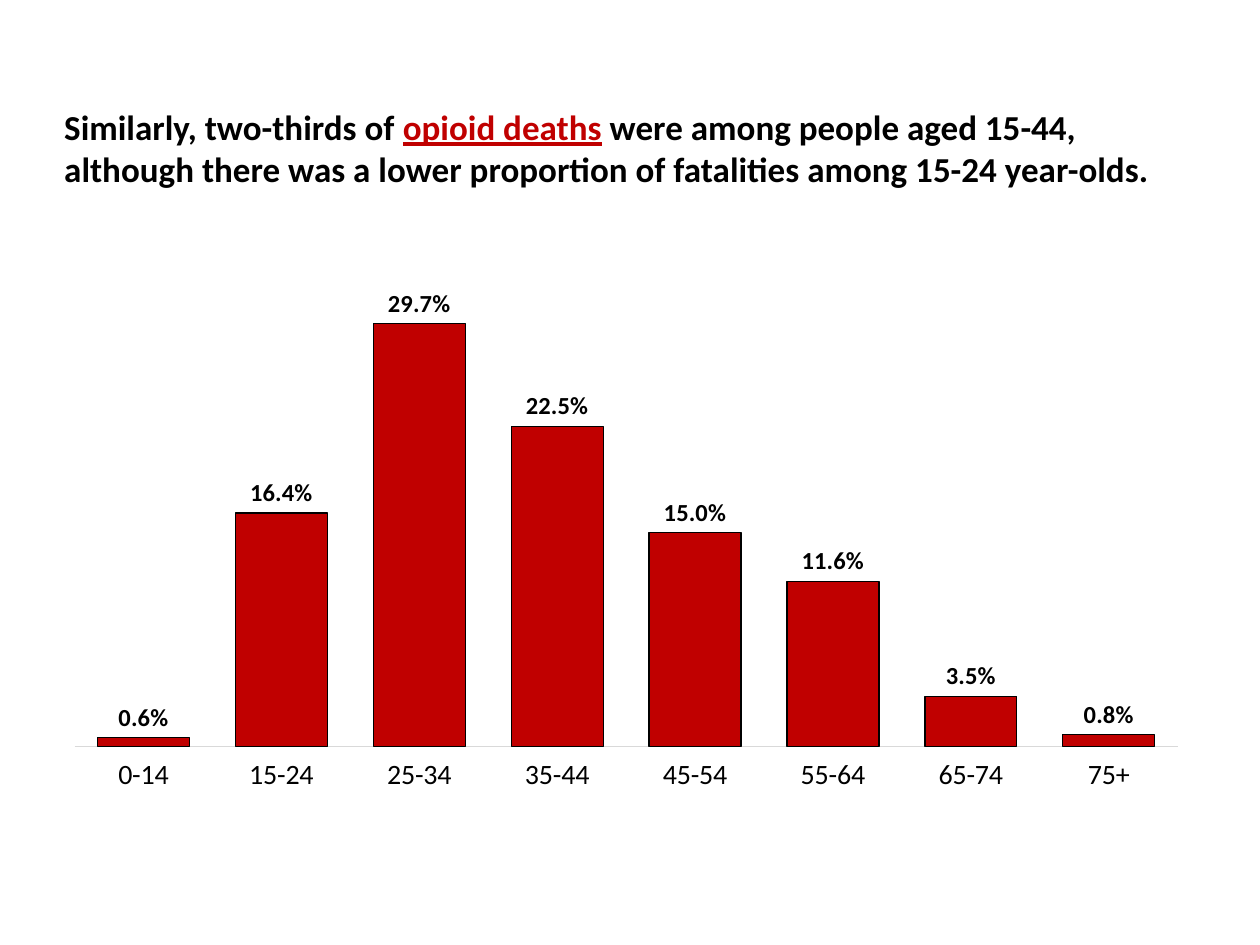
from dataclasses import dataclass

from lxml import etree
from pptx import Presentation
from pptx.chart.data import CategoryChartData
from pptx.dml.color import RGBColor
from pptx.enum.chart import XL_CHART_TYPE, XL_LABEL_POSITION, XL_TICK_LABEL_POSITION, XL_TICK_MARK
from pptx.enum.text import MSO_ANCHOR, MSO_AUTO_SIZE, PP_ALIGN
from pptx.oxml.ns import qn
from pptx.util import Inches, Pt

COLUMNS = XL_CHART_TYPE.COLUMN_CLUSTERED
ABOVE_BAR = XL_LABEL_POSITION.OUTSIDE_END
LABELS_LOW = XL_TICK_LABEL_POSITION.LOW
NO_TICKS = XL_TICK_MARK.NONE
TOP = MSO_ANCHOR.TOP
FIT_SHAPE = MSO_AUTO_SIZE.SHAPE_TO_FIT_TEXT
LEFT = PP_ALIGN.LEFT

TITLE_RUNS = [
    ("Similarly, two-thirds of ", False),
    ("opioid deaths", True),
    (" were among people aged 15-44, although there was a lower proportion "
     "of fatalities among 15-24 year-olds.", False),
]
DEATH_SHARES = {
    "0-14": 0.006, "15-24": 0.164, "25-34": 0.297, "35-44": 0.225,
    "45-54": 0.15, "55-64": 0.116, "65-74": 0.035, "75+": 0.008,
}


@dataclass(frozen=True)
class Theme:
    """Colours, font and type sizes of the slide."""
    font: str = "Calibri"
    ink: RGBColor = RGBColor(0x00, 0x00, 0x00)
    accent: RGBColor = RGBColor(0xC0, 0x00, 0x00)
    axis: RGBColor = RGBColor(0xD9, 0xD9, 0xD9)
    title_size: int = 20
    category_size: int = 16
    label_size: int = 14
    chart_size: int = 10
    line_width: float = 0.75


class SlideBuilder:
    """Draws styled elements on one slide, placed by shares of its size."""

    def __init__(self, presentation, theme):
        """Add a title-only slide and keep its theme."""
        self.theme = theme
        self.width = presentation.slide_width
        self.height = presentation.slide_height
        self.slide = presentation.slides.add_slide(presentation.slide_layouts[5])

    def box(self, left, top, width, height):
        """Turn shares of the slide into lengths."""
        return (int(left * self.width), int(top * self.height),
                int(width * self.width), int(height * self.height))

    def style_font(self, font, size, bold=False):
        """Apply the theme font in the ink colour."""
        font.name = self.theme.font
        font.size = Pt(size)
        font.bold = bold
        font.color.rgb = self.theme.ink

    def style_line(self, line, color):
        """Apply the theme line width and a colour."""
        line.color.rgb = color
        line.width = Pt(self.theme.line_width)

    def title(self, runs, *shares):
        """Fill the title, with highlighted runs underlined in the accent."""
        shape = self.slide.shapes.title
        shape.left, shape.top, shape.width, shape.height = self.box(*shares)
        frame = shape.text_frame
        frame.word_wrap = True
        frame.auto_size = FIT_SHAPE
        frame.vertical_anchor = TOP
        paragraph = frame.paragraphs[0]
        paragraph.alignment = LEFT
        self.style_font(paragraph.font, self.theme.title_size, bold=True)
        for text, highlighted in runs:
            run = paragraph.add_run()
            run.text = text
            if highlighted:
                run.font.color.rgb = self.theme.accent
                run.font.underline = True

    def column_chart(self, values, maximum, plot, *shares):
        """Add a column chart of percentages with a label on each bar."""
        data = CategoryChartData(number_format="0.0%")
        data.categories = list(values)
        data.add_series("Series 1", list(values.values()))
        chart = self.slide.shapes.add_chart(COLUMNS, *self.box(*shares), data).chart
        chart.has_legend = False
        chart.has_title = False
        self.style_font(chart.font, self.theme.chart_size)

        category_axis = chart.category_axis
        category_axis.major_tick_mark = NO_TICKS
        category_axis.minor_tick_mark = NO_TICKS
        category_axis.tick_label_position = LABELS_LOW
        self.style_font(category_axis.tick_labels.font, self.theme.category_size)
        self.style_line(category_axis.format.line, self.theme.axis)

        value_axis = chart.value_axis
        value_axis.visible = False
        value_axis.has_major_gridlines = False
        value_axis.minimum_scale = 0
        value_axis.maximum_scale = maximum

        bars = chart.plots[0]
        bars.gap_width = 50
        bars.vary_by_categories = False
        series = bars.series[0]
        series.format.fill.solid()
        series.format.fill.fore_color.rgb = self.theme.accent
        self.style_line(series.format.line, self.theme.ink)

        labels = series.data_labels
        labels.show_value = True
        labels.number_format = "0.0%"
        labels.number_format_is_linked = False
        labels.position = ABOVE_BAR
        self.style_font(labels.font, self.theme.label_size, bold=True)
        self.place_plot(chart, plot)

    def place_plot(self, chart, plot):
        """Fix the inner plot area by shares of the chart."""
        area = chart.element.find(".//" + qn("c:plotArea"))
        for old_layout in area.findall(qn("c:layout")):
            area.remove(old_layout)
        layout = etree.Element(qn("c:layout"))
        area.insert(0, layout)
        manual = etree.SubElement(layout, qn("c:manualLayout"))
        settings = {"layoutTarget": "inner", "xMode": "edge", "yMode": "edge"}
        settings.update(zip("xywh", map(str, plot)))
        for name, value in settings.items():
            etree.SubElement(manual, qn("c:" + name)).set("val", value)


def main():
    """Build and save the slide."""
    presentation = Presentation()
    presentation.slide_width = Inches(10)
    presentation.slide_height = Inches(7.5)
    builder = SlideBuilder(presentation, Theme())
    builder.title(TITLE_RUNS, 0.041, 0.105, 0.903, 0.103)
    builder.column_chart(DEATH_SHARES, 0.35, (0.02, 0.02, 0.96, 0.89),
                         0.041, 0.251, 0.912, 0.592)
    presentation.save("out.pptx")


if __name__ == "__main__":
    main()
